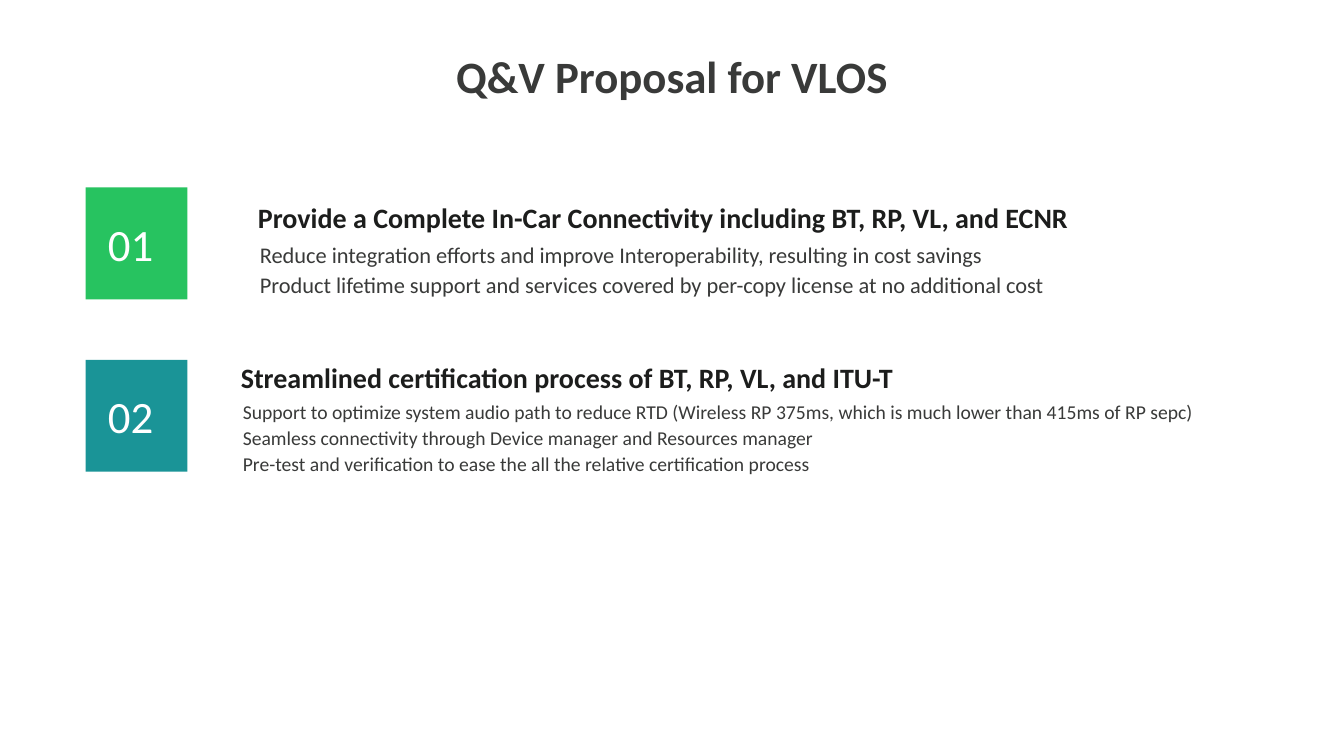
from pptx import Presentation
from pptx.dml.color import RGBColor
from pptx.enum.shapes import MSO_SHAPE
from pptx.enum.text import MSO_ANCHOR, MSO_AUTO_SIZE, PP_ALIGN
from pptx.util import Pt

PX = 9144  # 100 px to the inch
FONT = "Calibri"
GREY = RGBColor(0x39, 0x3A, 0x39)
BLACK = RGBColor(0x1C, 0x1D, 0x1C)
WHITE = RGBColor(0xFF, 0xFF, 0xFF)
GREEN = RGBColor(0x27, 0xC3, 0x60)
TEAL = RGBColor(0x1A, 0x94, 0x97)

TILE_LEFT, TILE_WIDTH, TILE_HEIGHT = 85, 101, 111

# number, tile colour, tile top, heading box, heading, body box, body size, body lines
POINTS = [
    ("01", GREEN, 186,
     (246, 194, 1010, 44),
     "Provide a Complete In-Car Connectivity including BT, RP, VL, and ECNR",
     (248, 232, 863, 68), 16,
     ["Reduce integration efforts and improve Interoperability, resulting in cost savings",
      "Product lifetime support and services covered by per-copy license at no additional cost"]),
    ("02", TEAL, 357,
     (229, 353, 686, 44),
     "Streamlined certification process of BT, RP, VL, and ITU-T",
     (231, 390, 1025, 87), 14,
     ["Support to optimize system audio path to reduce RTD "
      "(Wireless RP 375ms, which is much lower than 415ms of RP sepc)",
      "Seamless connectivity through Device manager and Resources manager",
      "Pre-test and verification to ease the all the relative certification process"]),
]


def to_emu(box):
    return [length * PX for length in box]


def write_lines(frame, lines, size, color, bold=False, spacing=None, align=PP_ALIGN.LEFT):
    for index, line in enumerate(lines):
        paragraph = frame.paragraphs[0] if index == 0 else frame.add_paragraph()
        paragraph.alignment = align
        paragraph.line_spacing = spacing
        run = paragraph.add_run()
        run.text = line
        run.font.name = FONT
        run.font.size = Pt(size)
        run.font.bold = bold
        run.font.color.rgb = color


def add_text(slide, box, lines, size, color, **style):
    frame = slide.shapes.add_textbox(*to_emu(box)).text_frame
    frame.word_wrap = True
    write_lines(frame, lines, size, color, **style)
    return frame


def add_title(slide, box, text):
    title = slide.shapes.title
    title.left, title.top, title.width, title.height = to_emu(box)
    frame = title.text_frame
    frame.auto_size = MSO_AUTO_SIZE.NONE
    frame.vertical_anchor = MSO_ANCHOR.MIDDLE
    write_lines(frame, [text], 32, GREY, bold=True, spacing=0.9, align=PP_ALIGN.CENTER)


def add_number_tile(slide, box, number, color):
    left, top, _, _ = box
    tile = slide.shapes.add_shape(MSO_SHAPE.RECTANGLE, *to_emu(box))
    tile.shadow.inherit = False
    tile.fill.solid()
    tile.fill.fore_color.rgb = color
    tile.line.fill.background()
    frame = add_text(slide, (left + 22, top + 13, 85, 85), [number], 32, WHITE)
    frame.margin_left = frame.margin_right = frame.margin_top = frame.margin_bottom = 0
    frame.vertical_anchor = MSO_ANCHOR.MIDDLE


def add_point(slide, number, color, tile_top, heading_box, heading, body_box, body_size, lines):
    add_number_tile(slide, (TILE_LEFT, tile_top, TILE_WIDTH, TILE_HEIGHT), number, color)
    body = add_text(slide, body_box, lines, body_size, GREY, spacing=1.1)
    title = add_text(slide, heading_box, [heading], 20, BLACK, bold=True)
    for frame in (body, title):
        frame.auto_size = MSO_AUTO_SIZE.SHAPE_TO_FIT_TEXT


def main():
    presentation = Presentation()
    presentation.slide_width, presentation.slide_height = to_emu((1333, 750))
    slide = presentation.slides.add_slide(presentation.slide_layouts[5])

    # Title
    add_title(slide, (200, 43, 933, 71), "Q&V Proposal for VLOS")

    # Numbered points
    for point in POINTS:
        add_point(slide, *point)

    presentation.save("out.pptx")


if __name__ == "__main__":
    main()
